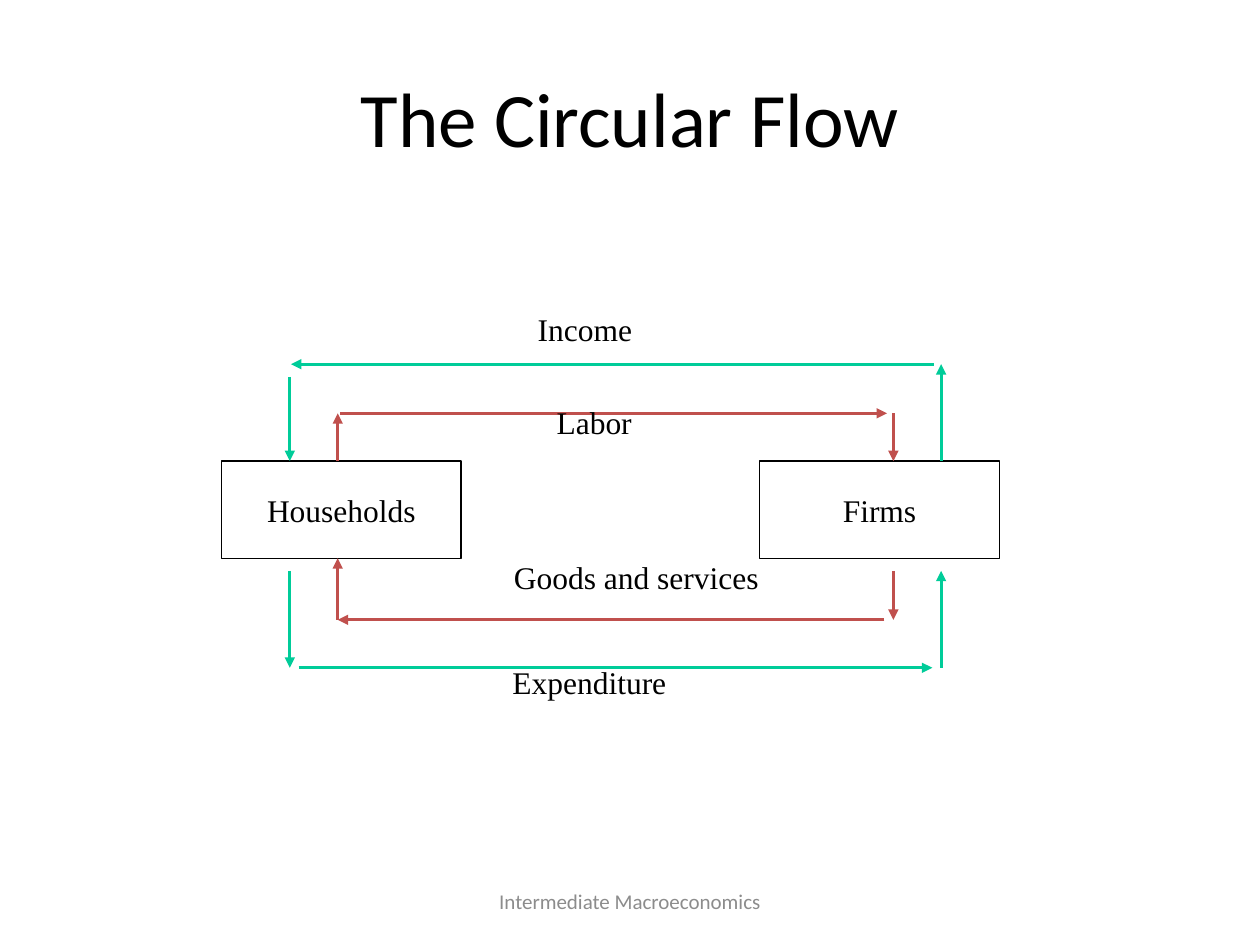
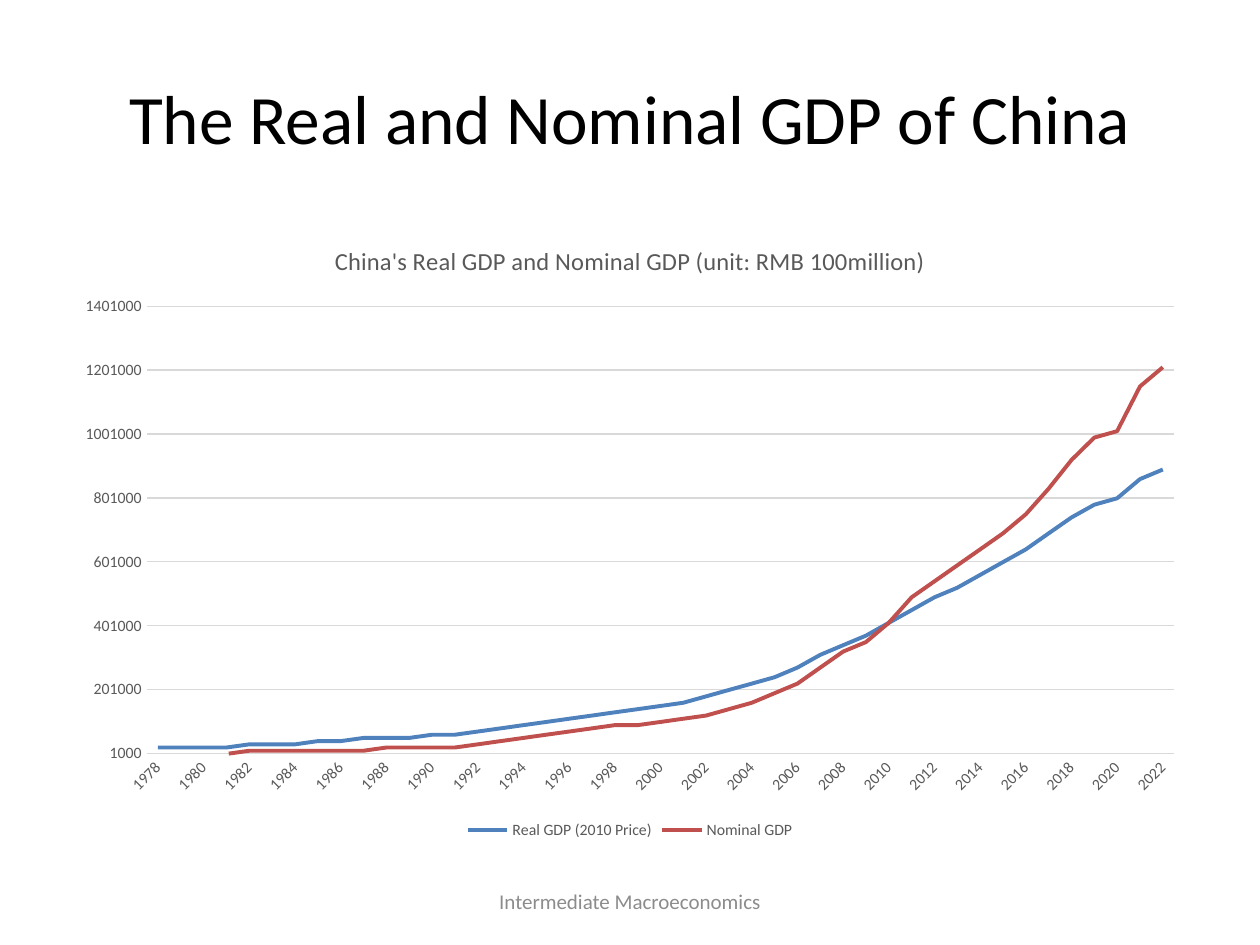
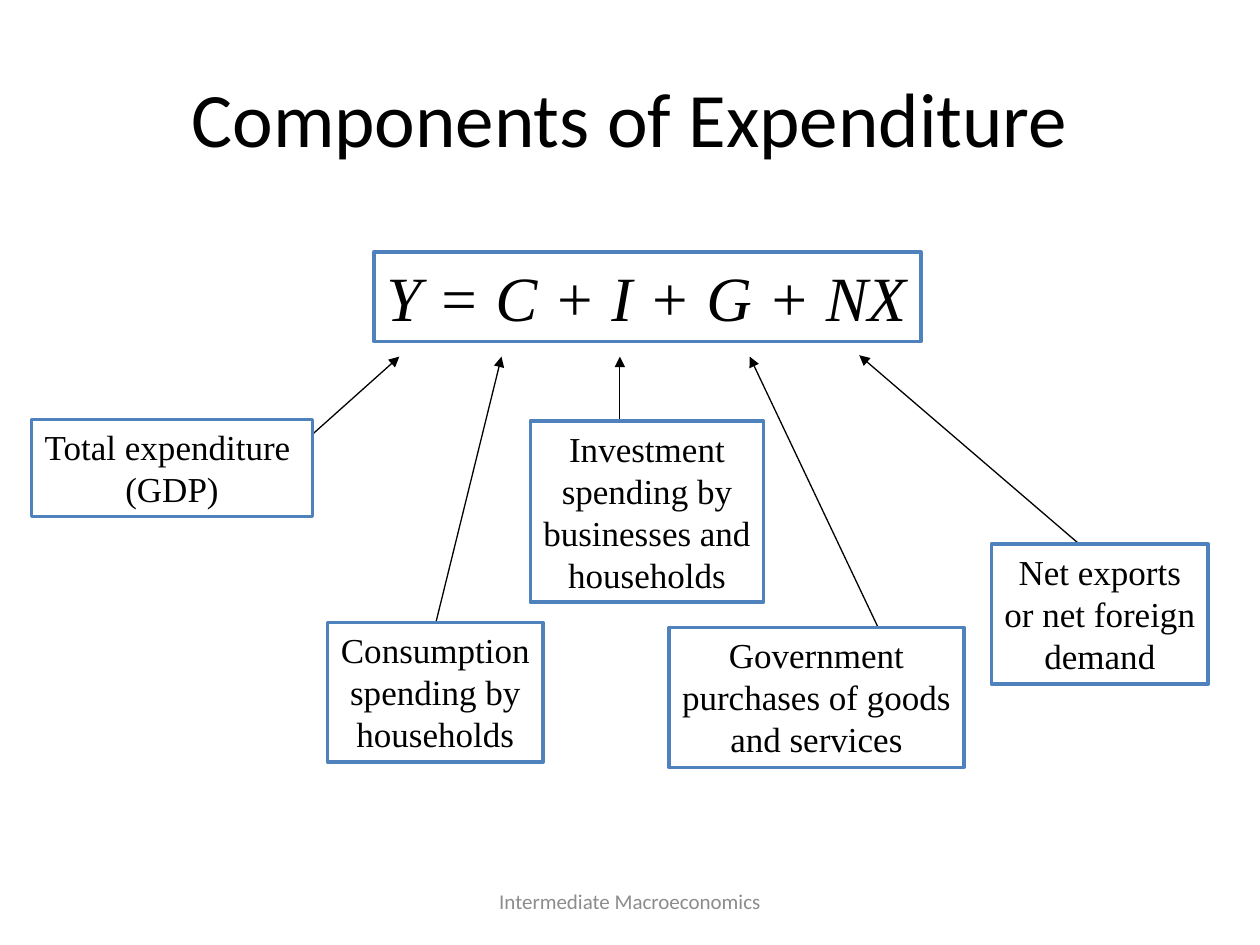
from dataclasses import dataclass

import lxml.etree
import pptx
import pptx.chart.data
import pptx.dml.color
import pptx.enum.chart
import pptx.enum.shapes
import pptx.enum.text
import pptx.oxml.ns
import pptx.util

Pt = pptx.util.Pt
RGBColor = pptx.dml.color.RGBColor
qn = pptx.oxml.ns.qn
Align = pptx.enum.text.PP_ALIGN
Anchor = pptx.enum.text.MSO_ANCHOR
AutoSize = pptx.enum.text.MSO_AUTO_SIZE

BLACK = RGBColor(0x00, 0x00, 0x00)
WHITE = RGBColor(0xFF, 0xFF, 0xFF)
FOOTER_GREY = RGBColor(0x8C, 0x8C, 0x8C)
CHART_TEXT = RGBColor(0x59, 0x59, 0x59)
GRID_GREY = RGBColor(0xD9, 0xD9, 0xD9)
GREEN = RGBColor(0x00, 0xCC, 0x99)
RED = RGBColor(0xC0, 0x50, 0x4D)
BLUE = RGBColor(0x4F, 0x81, 0xBD)

SANS = "Calibri"
SERIF = "Times New Roman"


@dataclass(frozen=True)
class Box:
    """A rectangle in points."""
    x: float
    y: float
    w: float
    h: float

    def lengths(self) -> tuple:
        return Pt(self.x), Pt(self.y), Pt(self.w), Pt(self.h)


@dataclass(frozen=True)
class TextStyle:
    size: float
    font: str = SERIF
    color: RGBColor = BLACK
    italic: bool = False
    align: Align = Align.CENTER
    anchor: Anchor = Anchor.TOP
    wrap: bool = False
    grow: bool = False


@dataclass(frozen=True)
class Arrow:
    x1: float
    y1: float
    x2: float
    y2: float


@dataclass(frozen=True)
class Component:
    """A term of the expenditure equation, with the arrow that points to it."""
    text: str
    box: Box
    arrow: Arrow


@dataclass(frozen=True)
class GdpSeries:
    name: str
    color: RGBColor
    ten_thousands: tuple


TITLE_BOX = Box(36, 21.6, 648, 90)
FOOTER_BOX = Box(246, 500.5, 228, 28.8)
FOOTER = "Intermediate Macroeconomics"
FOOTER_STYLE = TextStyle(12, SANS, FOOTER_GREY, anchor=Anchor.MIDDLE, wrap=True)
SECTOR_STYLE = TextStyle(18, anchor=Anchor.MIDDLE)
FLOW_STYLE = TextStyle(18, align=Align.LEFT, grow=True)
EQUATION_STYLE = TextStyle(36, italic=True, align=Align.LEFT, grow=True)
COMPONENT_STYLE = TextStyle(20, grow=True)

# Circular flow: columns of the vertical arrows, rows of the horizontal ones
OUTER_LEFT, INNER_LEFT, INNER_RIGHT, OUTER_RIGHT = 165.6, 193, 510.5, 537.8
INCOME_Y, LABOR_Y, GOODS_Y, EXPENDITURE_Y = 208.1, 236.2, 354.2, 381.6
SECTOR_TOP, SECTOR_BOTTOM, BELOW_SECTOR = 263.5, 319, 326.2

SECTORS = {
    "Households": Box(126.7, SECTOR_TOP, 136.8, 55.5),
    "Firms": Box(434.2, SECTOR_TOP, 136.8, 55.5),
}
FLOW_LABELS = {
    "Income": Box(300.2, 173.5, 69.1, 40.3),
    "Labor": Box(311, 226.8, 65.5, 41.8),
    "Goods and services": Box(286.6, 315.4, 155.5, 28.8),
    "Expenditure": Box(285.8, 375.1, 103.7, 40.3),
}
FLOW_ARROWS = {
    GREEN: [
        Arrow(OUTER_RIGHT, SECTOR_TOP, OUTER_RIGHT, INCOME_Y),
        Arrow(533.5, INCOME_Y, 166.3, INCOME_Y),
        Arrow(OUTER_LEFT, 215.3, OUTER_LEFT, SECTOR_TOP),
        Arrow(OUTER_LEFT, BELOW_SECTOR, OUTER_LEFT, EXPENDITURE_Y),
        Arrow(170.6, EXPENDITURE_Y, 532.8, EXPENDITURE_Y),
        Arrow(OUTER_RIGHT, EXPENDITURE_Y, OUTER_RIGHT, BELOW_SECTOR),
    ],
    RED: [
        Arrow(INNER_LEFT, SECTOR_TOP, INNER_LEFT, LABOR_Y),
        Arrow(194.4, LABOR_Y, 506.9, LABOR_Y),
        Arrow(INNER_RIGHT, LABOR_Y, INNER_RIGHT, SECTOR_TOP),
        Arrow(INNER_RIGHT, BELOW_SECTOR, INNER_RIGHT, GOODS_Y),
        Arrow(505.4, GOODS_Y, INNER_LEFT, GOODS_Y),
        Arrow(INNER_LEFT, GOODS_Y, INNER_LEFT, SECTOR_BOTTOM),
    ],
}

YEARS = range(1978, 2023)
GDP = [
    GdpSeries("Real GDP (2010 Price)", BLUE, (
        2, 2, 2, 2, 3, 3, 3, 4, 4, 5, 5, 5, 6, 6, 7, 8, 9, 10, 11, 12, 13, 14, 15,
        16, 18, 20, 22, 24, 27, 31, 34, 37, 41, 45, 49, 52, 56, 60, 64, 69, 74, 78,
        80, 86, 89)),
    GdpSeries("Nominal GDP", RED, (
        0, 0, 0, 0, 1, 1, 1, 1, 1, 1, 2, 2, 2, 2, 3, 4, 5, 6, 7, 8, 9, 9, 10,
        11, 12, 14, 16, 19, 22, 27, 32, 35, 41, 49, 54, 59, 64, 69, 75, 83, 92, 99,
        101, 115, 121)),
]

EQUATION_BOX = Box(213.8, 144, 312.5, 51.1)
ARROW_TIP_Y = 203.8
COMPONENTS = [
    Component("Government\npurchases of goods\nand services",
              Box(382.3, 358.6, 168.5, 79.9), Arrow(501.8, 358.6, 428.4, ARROW_TIP_Y)),
    Component("Total expenditure \n(GDP)",
              Box(18, 239.8, 160.6, 55.4), Arrow(167.8, 257.8, 228.2, ARROW_TIP_Y)),
    Component("Consumption\nspending by\nhouseholds",
              Box(187.2, 355.7, 123.1, 79.9), Arrow(249.1, 355.7, 286.6, ARROW_TIP_Y)),
    Component("Investment\nspending by\nbusinesses and\nhouseholds",
              Box(303.1, 240.5, 133.2, 103.7), Arrow(354.2, 240.5, 354.2, ARROW_TIP_Y)),
    Component("Net exports\nor net foreign\ndemand",
              Box(566.6, 311, 123.8, 79.9), Arrow(622.8, 316.1, 491, 203)),
]


def set_font(font, size: float, color: RGBColor, name: str = SANS, italic: bool = False) -> None:
    font.size, font.name, font.italic = Pt(size), name, italic
    font.color.rgb = color


def write_text(sp, text: str, style: TextStyle) -> None:
    tf = sp.text_frame
    tf.text = text
    tf.word_wrap = style.wrap
    tf.auto_size = AutoSize.SHAPE_TO_FIT_TEXT if style.grow else AutoSize.NONE
    tf.vertical_anchor = style.anchor
    for p in tf.paragraphs:
        p.alignment = style.align
        set_font(p.font, style.size, style.color, style.font, style.italic)


def add_text(s, box: Box, text: str, style: TextStyle) -> None:
    write_text(s.shapes.add_textbox(*box.lengths()), text, style)


def add_framed_text(s, box: Box, text: str, style: TextStyle,
                    line: RGBColor, width: float) -> None:
    sp = s.shapes.add_shape(pptx.enum.shapes.MSO_SHAPE.RECTANGLE, *box.lengths())
    sp.shadow.inherit = False
    sp.fill.solid()
    sp.fill.fore_color.rgb = WHITE
    sp.line.color.rgb = line
    sp.line.width = Pt(width)
    write_text(sp, text, style)


def add_arrow(s, arrow: Arrow, color: RGBColor, width: float) -> None:
    cx = s.shapes.add_connector(pptx.enum.shapes.MSO_CONNECTOR.STRAIGHT,
                                Pt(arrow.x1), Pt(arrow.y1), Pt(arrow.x2), Pt(arrow.y2))
    cx.line.color.rgb = color
    cx.line.width = Pt(width)
    sp_pr = cx._element.spPr
    lxml.etree.SubElement(sp_pr.find(qn("a:ln")), qn("a:tailEnd"), type="triangle")
    lxml.etree.SubElement(sp_pr, qn("a:effectLst"))


def add_slide(prs, title: str, title_size: float = 44):
    """Add a blank slide with the shared title and footer."""
    s = prs.slides.add_slide(prs.slide_layouts[6])
    add_text(s, TITLE_BOX, title,
             TextStyle(title_size, SANS, anchor=Anchor.MIDDLE, wrap=True))
    add_text(s, FOOTER_BOX, FOOTER, FOOTER_STYLE)
    return s


def build_circular_flow(prs) -> None:
    s = add_slide(prs, "The Circular Flow")
    for name, box in SECTORS.items():
        add_framed_text(s, box, name, SECTOR_STYLE, BLACK, 0.75)
    for color, arrows in FLOW_ARROWS.items():
        for arrow in arrows:
            add_arrow(s, arrow, color, 1.75)
    for label, box in FLOW_LABELS.items():
        add_text(s, box, label, FLOW_STYLE)


def style_axes(chart) -> None:
    for axis in (chart.category_axis, chart.value_axis):
        axis.major_tick_mark = pptx.enum.chart.XL_TICK_MARK.NONE
        set_font(axis.tick_labels.font, 9, CHART_TEXT)

    years = chart.category_axis
    years.format.line.color.rgb = GRID_GREY
    years.format.line.width = Pt(0.75)
    years._element.find(qn("c:txPr")).find(qn("a:bodyPr")).set("rot", "-2700000")
    skip = lxml.etree.Element(qn("c:tickLblSkip"), val="2")
    years._element.find(qn("c:noMultiLvlLbl")).addprevious(skip)

    values = chart.value_axis
    values.minimum_scale, values.maximum_scale = 1000, 1401000
    values.major_unit = 200000
    values.tick_labels.number_format = "General"
    values.tick_labels.number_format_is_linked = False
    values.format.line.fill.background()
    values.major_gridlines.format.line.color.rgb = GRID_GREY
    values.major_gridlines.format.line.width = Pt(0.75)


def build_gdp_chart(prs) -> None:
    s = add_slide(prs, "The Real and Nominal GDP of China", 39.6)
    data = pptx.chart.data.CategoryChartData()
    data.categories = [str(year) for year in YEARS]
    for gdp in GDP:
        data.add_series(gdp.name, [v * 10000 for v in gdp.ten_thousands])
    chart = s.shapes.add_chart(pptx.enum.chart.XL_CHART_TYPE.LINE,
                               *Box(36, 126, 648, 356.4).lengths(), data).chart
    set_font(chart.font, 10, BLACK)

    chart.has_title = True
    tf = chart.chart_title.text_frame
    tf.text = "China's Real GDP and Nominal GDP (unit: RMB 100million)"
    set_font(tf.paragraphs[0].font, 14, CHART_TEXT)
    tf.paragraphs[0].font.bold = False
    chart.chart_title.include_in_layout = False

    chart.has_legend = True
    chart.legend.position = pptx.enum.chart.XL_LEGEND_POSITION.BOTTOM
    chart.legend.include_in_layout = False
    set_font(chart.legend.font, 9, CHART_TEXT)

    style_axes(chart)
    chart.plots[0].vary_by_categories = False
    for series, gdp in zip(chart.plots[0].series, GDP):
        series.smooth = False
        series.marker.style = pptx.enum.chart.XL_MARKER_STYLE.NONE
        series.format.line.color.rgb = gdp.color
        series.format.line.width = Pt(2.25)


def build_components(prs) -> None:
    s = add_slide(prs, "Components of Expenditure")
    add_framed_text(s, EQUATION_BOX, "Y = C + I + G + NX", EQUATION_STYLE, BLUE, 2)
    for component in COMPONENTS:
        add_arrow(s, component.arrow, BLACK, 0.75)
        add_framed_text(s, component.box, component.text, COMPONENT_STYLE, BLUE, 2)


def main() -> None:
    prs = pptx.Presentation()
    prs.slide_width, prs.slide_height = Pt(720), Pt(540)
    build_circular_flow(prs)
    build_gdp_chart(prs)
    build_components(prs)
    prs.save("out.pptx")


if __name__ == "__main__":
    main()
